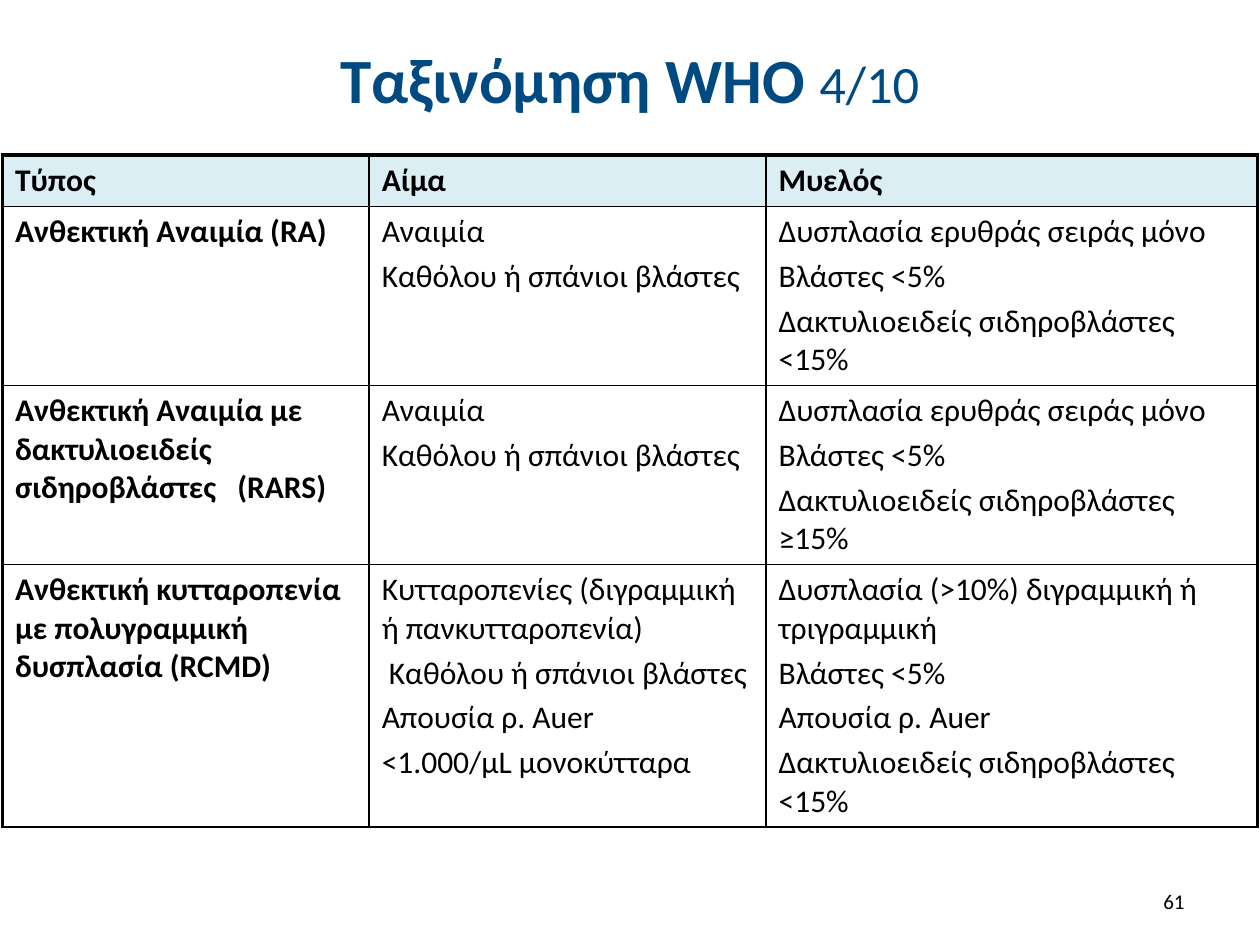
from dataclasses import dataclass

from lxml.etree import SubElement
from pptx import Presentation
from pptx.dml.color import RGBColor as Color
from pptx.enum.text import MSO_ANCHOR as Anchor, PP_ALIGN as Align
from pptx.oxml.ns import qn
from pptx.util import Inches, Pt


@dataclass(frozen=True)
class Theme:
    font: str = "Calibri"
    title: str = "004A82"
    text: str = "000000"
    header: str = "DBEEF4"
    title_size: int = 36
    counter_size: int = 30
    body_size: int = 18
    number_size: int = 12
    thin: float = 1
    thick: float = 2.25


THEME = Theme()
WIDTH, HEIGHT = 10, 7.5

# Boxes: left, top, width, height in inches
TITLE_BOX = (0.5, 0.13, 9, 0.99)
TABLE_BOX = (0.02, 1.23, 9.96, 5.33)
NUMBER_BOX = (7.17, 6.95, 2.33, 0.4)

COLUMN_WIDTHS = (2.91, 3.15, 3.9)
ROW_HEIGHTS = (0.41, 1.42, 1.42, 2.08)

ROWS = [
    [["Τύπος"], ["Αίμα"], ["Μυελός"]],
    [
        ["Ανθεκτική Αναιμία (RA)"],
        ["Αναιμία", "Καθόλου ή σπάνιοι βλάστες"],
        ["Δυσπλασία ερυθράς σειράς μόνο", "Βλάστες <5%",
         "Δακτυλιοειδείς σιδηροβλάστες <15%"],
    ],
    [
        ["Ανθεκτική Αναιμία με δακτυλιοειδείς σιδηροβλάστες   (RARS)"],
        ["Αναιμία", "Καθόλου ή σπάνιοι βλάστες"],
        ["Δυσπλασία ερυθράς σειράς μόνο", "Βλάστες <5%",
         "Δακτυλιοειδείς σιδηροβλάστες ≥15%"],
    ],
    [
        ["Ανθεκτική κυτταροπενία με πολυγραμμική δυσπλασία (RCMD)"],
        ["Κυτταροπενίες (διγραμμική ή πανκυτταροπενία)",
         " Καθόλου ή σπάνιοι βλάστες", "Απουσία ρ. Auer",
         "<1.000/μL μονοκύτταρα"],
        ["Δυσπλασία (>10%) διγραμμική ή τριγραμμική", "Βλάστες <5%",
         "Απουσία ρ. Auer", "Δακτυλιοειδείς σιδηροβλάστες <15%"],
    ],
]


def add_run(paragraph, text, size, color=THEME.text, bold=False):
    run = paragraph.add_run()
    run.text = text
    run.font.name = THEME.font
    run.font.size = Pt(size)
    run.font.bold = bold
    run.font.color.rgb = Color.from_string(color)


def set_borders(cell, widths):
    """Draw the cell's edges; widths go left, right, top, bottom."""
    properties = cell._tc.get_or_add_tcPr()
    for side, width in zip("LRTB", widths):
        line = SubElement(properties, qn(f"a:ln{side}"), w=str(Pt(width)))
        fill = SubElement(line, qn("a:solidFill"))
        SubElement(fill, qn("a:srgbClr"), val=THEME.text)


def add_title(slide, box):
    title = slide.shapes.title
    title.left, title.top, title.width, title.height = map(Inches, box)
    frame = title.text_frame
    frame.word_wrap = True
    frame.vertical_anchor = Anchor.MIDDLE
    paragraph = frame.paragraphs[0]
    paragraph.alignment = Align.CENTER
    add_run(paragraph, "Ταξινόμηση WHO ", THEME.title_size, THEME.title, True)
    add_run(paragraph, "4/10", THEME.counter_size, THEME.title)


def fill_cell(cell, lines, bold):
    for index, text in enumerate(lines):
        frame = cell.text_frame
        paragraph = frame.add_paragraph() if index else frame.paragraphs[0]
        paragraph.space_before = Pt(THEME.body_size * 0.2)
        add_run(paragraph, text, THEME.body_size, bold=bold)


def add_classification_table(slide, box):
    left, top, width, height = box
    table = slide.shapes.add_table(
        len(ROWS), len(COLUMN_WIDTHS), *map(Inches, box)).table
    # Column and row sizes share out the box
    for column, share in zip(table.columns, COLUMN_WIDTHS):
        column.width = Inches(width * share / sum(COLUMN_WIDTHS))
    for row, share in zip(table.rows, ROW_HEIGHTS):
        row.height = Inches(height * share / sum(ROW_HEIGHTS))

    last_column = len(COLUMN_WIDTHS) - 1
    for r, row in enumerate(ROWS):
        for c, lines in enumerate(row):
            cell = table.cell(r, c)
            fill_cell(cell, lines, bold=r == 0 or c == 0)
            # Heavy frame on the left, right and top
            outer = (c == 0, c == last_column, r == 0, False)
            set_borders(cell, [THEME.thick if edge else THEME.thin
                               for edge in outer])
            if r == 0:
                cell.fill.solid()
                cell.fill.fore_color.rgb = Color.from_string(THEME.header)
            else:
                cell.fill.background()


def add_slide_number(slide, box):
    frame = slide.shapes.add_textbox(*map(Inches, box)).text_frame
    frame.word_wrap = True
    frame.vertical_anchor = Anchor.MIDDLE
    paragraph = frame.paragraphs[0]
    paragraph.alignment = Align.RIGHT
    add_run(paragraph, "61", THEME.number_size)


def main():
    presentation = Presentation()
    presentation.slide_width = Inches(WIDTH)
    presentation.slide_height = Inches(HEIGHT)
    title_only = presentation.slide_layouts[5]
    slide = presentation.slides.add_slide(title_only)
    add_classification_table(slide, TABLE_BOX)
    add_title(slide, TITLE_BOX)
    add_slide_number(slide, NUMBER_BOX)
    presentation.save("out.pptx")


if __name__ == "__main__":
    main()
